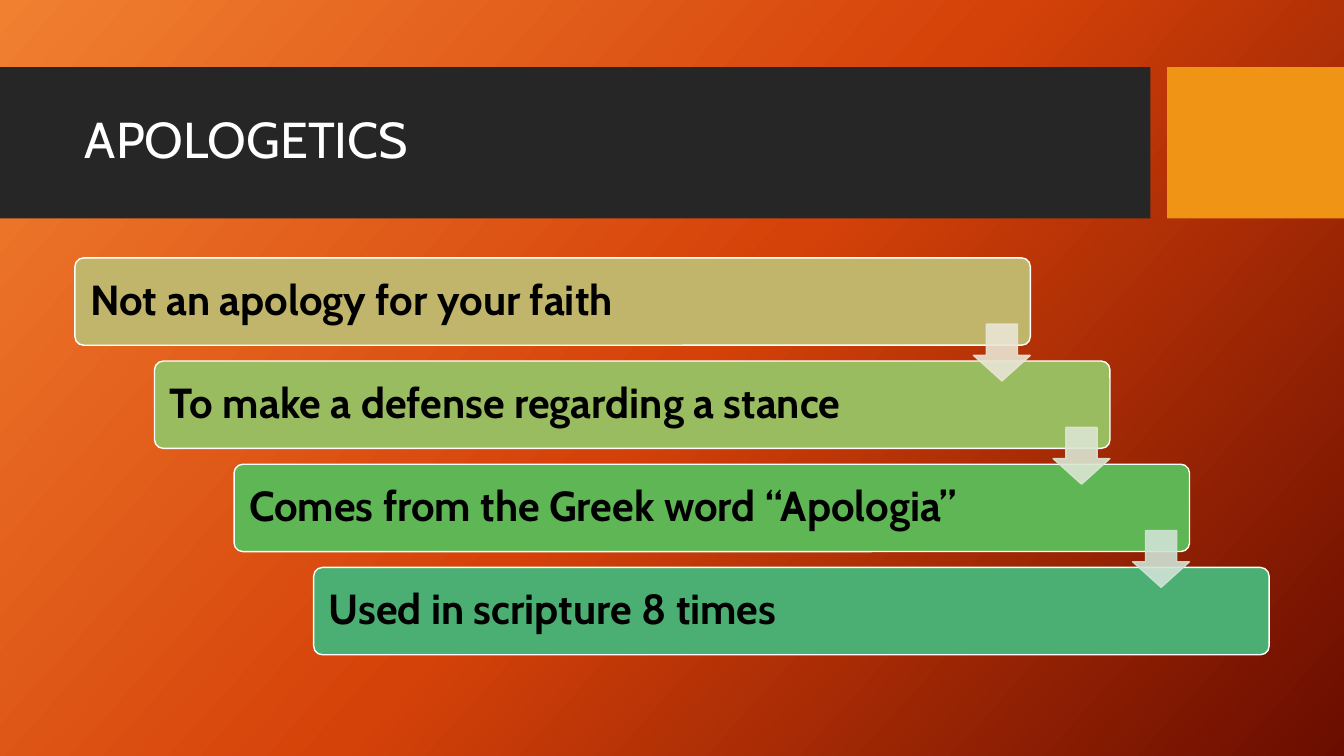
from copy import deepcopy
from dataclasses import dataclass

from pptx import Presentation
from pptx.dml.color import RGBColor
from pptx.enum.shapes import MSO_SHAPE
from pptx.enum.text import MSO_ANCHOR, PP_ALIGN
from pptx.oxml.ns import qn
from pptx.util import Pt

RECTANGLE = MSO_SHAPE.RECTANGLE
ROUNDED = MSO_SHAPE.ROUNDED_RECTANGLE
DOWN_ARROW = MSO_SHAPE.DOWN_ARROW
MIDDLE = MSO_ANCHOR.MIDDLE
LEFT = PP_ALIGN.LEFT
TITLE_ONLY = 5


@dataclass(frozen=True)
class Theme:
    font: str = "Cabin"
    title_size: int = 36
    card_size: int = 30
    white: str = "FFFFFF"
    black: str = "000000"
    band: str = "262626"
    accent: str = "F09415"
    background: tuple = ("F18031", "D54209", "6A0D00")
    cards: tuple = ("C1B56B", "99BC60", "5FB654", "4BAF73")
    arrows: tuple = ("E9E5D4", "DBE6D2", "D0E3D5")


class SlideBuilder:
    def __init__(self, slide, theme):
        self.slide = slide
        self.theme = theme

    def background(self, angle):
        fill = self.slide.background.fill
        fill.gradient()
        fill.gradient_angle = 360 - angle
        stop_list = self.slide.element.find(".//" + qn("a:gsLst"))
        stop_list.insert(1, deepcopy(stop_list[0]))
        colors = self.theme.background
        for index, (stop, color) in enumerate(zip(fill.gradient_stops, colors)):
            stop.position = index / (len(colors) - 1)
            stop.color.rgb = RGBColor.from_string(color)

    def shape(self, kind, box, fill, line=None, adjustments=(), opacity=None):
        shape = self.slide.shapes.add_shape(kind, *map(Pt, box))
        shape.shadow.inherit = False
        for index, value in enumerate(adjustments):
            shape.adjustments[index] = value
        shape.fill.solid()
        shape.fill.fore_color.rgb = RGBColor.from_string(fill)
        if line:
            shape.line.width = Pt(1)
            shape.line.color.rgb = RGBColor.from_string(line)
        else:
            shape.line.fill.background()
        if opacity:
            for color in shape.element.spPr.iter(qn("a:srgbClr")):
                alpha = color.makeelement(qn("a:alpha"), {"val": str(opacity * 1000)})
                color.append(alpha)
        return shape

    def text(self, shape, text, size, color, bold, inset):
        frame = shape.text_frame
        frame.text = text
        frame_format = {
            "word_wrap": True, "vertical_anchor": MIDDLE,
            "margin_left": Pt(inset), "margin_right": Pt(inset),
        }
        for name, value in frame_format.items():
            setattr(frame, name, value)
        paragraph = frame.paragraphs[0]
        paragraph.alignment = LEFT
        paragraph.line_spacing = 0.9
        font_format = {"name": self.theme.font, "size": Pt(size), "bold": bold}
        for name, value in font_format.items():
            setattr(paragraph.font, name, value)
        paragraph.font.color.rgb = RGBColor.from_string(color)

    def title(self, text, box):
        title = self.slide.shapes.title
        for name, value in zip(("left", "top", "width", "height"), box):
            setattr(title, name, Pt(value))
        self.text(title, text, self.theme.title_size, self.theme.white, False, 7.2)
        # Bring the title in front of the band
        self.slide.shapes.element.append(title.element)

    def card(self, text, box, fill):
        card = self.shape(ROUNDED, box, fill, self.theme.white, (0.1,))
        self.text(card, text, self.theme.card_size, self.theme.black, True, 9)

    def arrow(self, box, color):
        # Adjustments run shaft width, then head length
        self.shape(DOWN_ARROW, box, color, color, (0.55, 0.45), opacity=90)


def main():
    theme = Theme()
    presentation = Presentation()
    presentation.slide_width = Pt(960)
    presentation.slide_height = Pt(540)
    slide = presentation.slides.add_slide(presentation.slide_layouts[TITLE_ONLY])
    builder = SlideBuilder(slide, theme)

    # Background and header
    builder.background(42)
    builder.shape(RECTANGLE, (0, 48, 821.8, 108), theme.band)
    builder.shape(RECTANGLE, (833.6, 48, 126.4, 108), theme.accent)
    builder.title("APOLOGETICS", (53.5, 59, 756.5, 85))

    # Staircase of cards
    statements = (
        "Not an apology for your faith",
        "To make a defense regarding a stance",
        "Comes from the Greek word “Apologia”",
        "Used in scripture 8 times",
    )
    left, top, width, height = 53.5, 184.2, 682.5, 62.4
    step_x, step_y = 56.85, 73.7
    for index, (statement, color) in enumerate(zip(statements, theme.cards)):
        box = (left + index * step_x, top + index * step_y, width, height)
        builder.card(statement, box, color)

    # Arrows at each card's right edge, reaching into the next card
    arrow_size = 40.6
    arrow_left = left + width - arrow_size
    arrow_top = top + 47.4
    for index, color in enumerate(theme.arrows):
        box = (arrow_left + index * step_x, arrow_top + index * step_y, arrow_size, arrow_size)
        builder.arrow(box, color)

    presentation.save("out.pptx")


if __name__ == "__main__":
    main()
